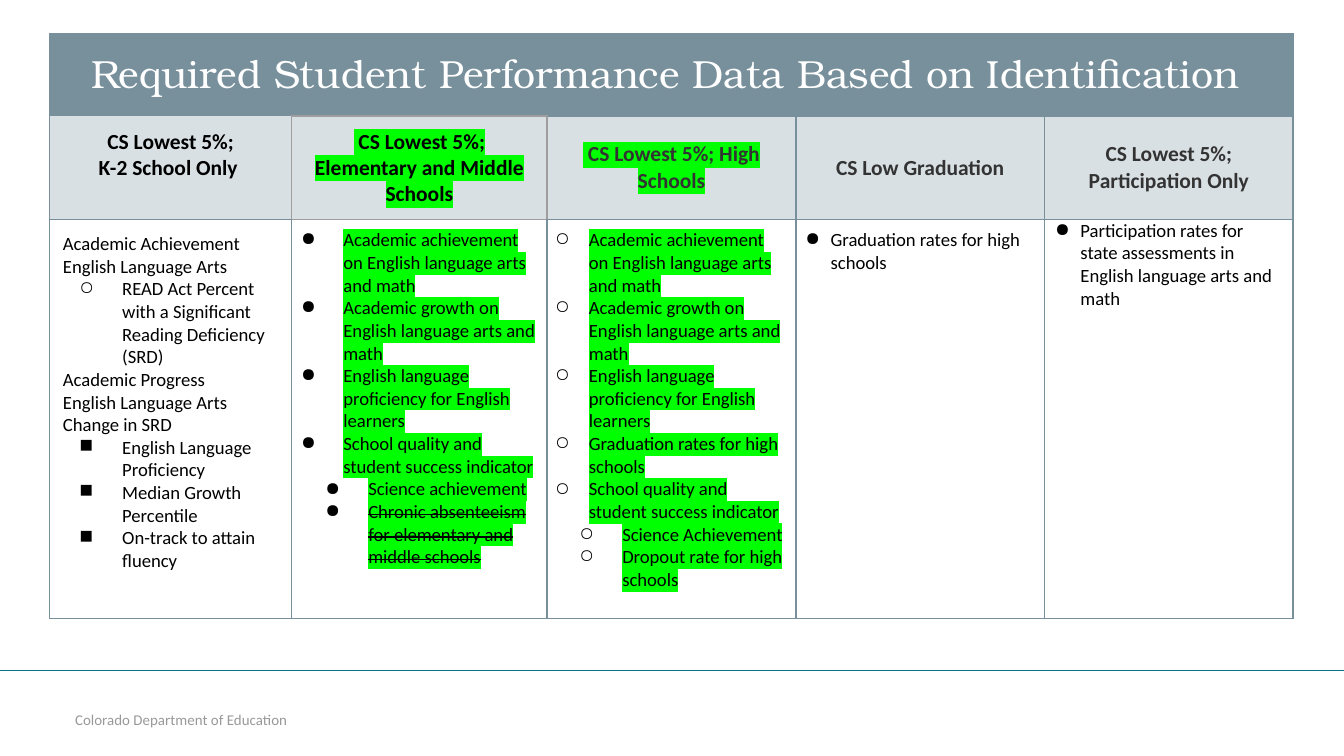
"""Build the slide on required student performance data by school identification."""
from dataclasses import dataclass, field

from lxml import etree
from pptx import Presentation, util as u
from pptx.dml.color import RGBColor
from pptx.enum import shapes, text
from pptx.oxml.ns import qn


@dataclass(frozen=True)
class Theme:
    slate: str = "78909C"
    grey: str = "9E9E9E"
    teal: str = "077682"
    green: str = "00FF00"
    white: str = "FFFFFF"
    black: str = "000000"
    charcoal: str = "333333"
    footer_grey: str = "999999"
    serif: str = "TeX Gyre Bonum"
    sans: str = "Calibri"
    title_size: float = 21
    head_size: float = 11.5
    body_size: float = 10
    footer_size: float = 8
    head_alpha: int = 28000


THEME = Theme()


@dataclass(frozen=True)
class Style:
    size: float
    color: str
    font: str = THEME.sans
    bold: bool = False
    highlight: bool = False
    centred: bool = False


@dataclass(frozen=True)
class Item:
    words: str
    bullet: str = ""
    left: float = 0
    hang: float = 0
    level: int = 0
    struck: bool = False


@dataclass(frozen=True)
class Column:
    width: float
    heads: list[str]
    items: list[Item]
    head_color: str = THEME.charcoal
    highlight: bool = False
    head_insets: tuple = (0.18,) * 4
    body_insets: tuple = (0.18,) * 4
    anchor: text.MSO_ANCHOR = text.MSO_ANCHOR.MIDDLE
    line: float = 1
    head_grey: str = ""
    body_grey: str = ""


@dataclass(frozen=True)
class CellLook:
    fill: str
    insets: tuple = (0.25,) * 4
    anchor: text.MSO_ANCHOR = text.MSO_ANCHOR.TOP
    line: float = 0.75
    grey_sides: str = ""
    alpha: int = field(default=0)


def bullets(mark: str, left: float, hang: float, level: int, *lines: str) -> list[Item]:
    """Return bulleted items that share one indent."""
    return [Item(words, mark, left, hang, level) for words in lines]


SHARED = (
    "Academic achievement on English language arts and math",
    "Academic growth on English language arts and math",
    "English language proficiency for English learners",
)
QUALITY = "School quality and student success indicator"
TITLE = "Required Student Performance Data Based on Identification "
ROWS = (1.55, 1.96, 7.54)
WIDE = (0.25,) * 4
FLAT = (0.2, 0, 0.2, 0)
TOP = text.MSO_ANCHOR.TOP

COLUMNS = [
    Column(4.57, [" CS Lowest 5%; ", "K-2 School Only "], [
        Item("Academic Achievement"),
        Item("English Language Arts"),
        *bullets("○", 1.12, 0.81, 1,
                 "READ Act Percent with a Significant Reading Deficiency (SRD)"),
        Item("Academic Progress"),
        Item("English Language Arts"),
        Item("Change in SRD"),
        *bullets("■", 1.12, 0.81, 2, "English Language Proficiency",
                 "Median Growth Percentile", "On-track to attain fluency"),
    ], THEME.black, False, WIDE, WIDE, TOP, 0.75, "R"),
    Column(4.83, [" CS Lowest 5%; Elementary and Middle Schools"], [
        *bullets("●", 0.8, 0.8, 0, *SHARED, QUALITY),
        *bullets("●", 1.27, 0.81, 0, "Science achievement"),
        Item("Chronic absenteeism for elementary and middle schools",
             "●", 1.27, 0.81, struck=True),
    ], THEME.black, True, WIDE, anchor=TOP, head_grey="LRTB", body_grey="T"),
    Column(4.7, [" CS Lowest 5%; High Schools"], [
        *bullets("○", 0.64, 0.64, 1, *SHARED, "Graduation rates for high schools", QUALITY),
        *bullets("○", 1.27, 0.81, 1, "Science Achievement", "Dropout rate for high schools"),
    ], highlight=True, body_insets=(0.15, 0.18, 0.18, 0.18), head_grey="L"),
    Column(4.7, ["CS Low Graduation"],
           bullets("●", 0.48, 0.48, 0, "Graduation rates for high schools")),
    Column(4.7, ["CS Lowest 5%; Participation Only"],
           bullets("●", 0.48, 0.48, 0,
                   "Participation rates for state assessments in English language arts and math"),
           head_insets=FLAT, body_insets=FLAT),
]


def apply(target: object, values: dict) -> None:
    """Set each named attribute on the target."""
    for name, value in values.items():
        setattr(target, name, value)


def add_color(parent: etree._Element, tag: str, color: str) -> etree._Element:
    """Append an element that holds one RGB colour."""
    holder = etree.SubElement(parent, qn(tag))
    etree.SubElement(holder, qn("a:srgbClr"), val=color)
    return holder


def write(frame: object, items: list[Item], style: Style) -> None:
    """Write the items as the paragraphs of a text frame."""
    for index, item in enumerate(items):
        para = frame.paragraphs[0] if index == 0 else frame.add_paragraph()
        apply(para, {"level": item.level, "alignment":
                     text.PP_ALIGN.CENTER if style.centred else text.PP_ALIGN.LEFT})
        if item.bullet:
            props = para._p.get_or_add_pPr()
            props.set("marL", str(u.Cm(item.left)))
            props.set("indent", str(-u.Cm(item.hang)))
            add_color(props, "a:buClr", THEME.black)
            etree.SubElement(props, qn("a:buChar"), char=item.bullet)
        span = para.add_run()
        span.text = item.words
        apply(span.font, {"size": u.Pt(style.size), "name": style.font, "bold": style.bold})
        span.font.color.rgb = RGBColor.from_string(style.color)
        props = span._r.get_or_add_rPr()
        if style.highlight:
            props.find(qn("a:solidFill")).addnext(add_color(props, "a:highlight", THEME.green))
        if item.struck:
            props.set("strike", "sngStrike")


def fill_cell(cell: object, items: list[Item], style: Style, look: CellLook) -> None:
    """Format one table cell and write its text."""
    left, top, right, bottom = map(u.Cm, look.insets)
    apply(cell, {"margin_left": left, "margin_top": top, "margin_right": right,
                 "margin_bottom": bottom, "vertical_anchor": look.anchor})
    props = cell._tc.get_or_add_tcPr()
    for side in "LRTB":
        edge = etree.SubElement(props, qn(f"a:ln{side}"), w=str(u.Pt(look.line)))
        add_color(edge, "a:solidFill", THEME.grey if side in look.grey_sides else THEME.slate)
    cell.fill.solid()
    cell.fill.fore_color.rgb = RGBColor.from_string(look.fill)
    if look.alpha:
        color = props.find(f"{qn('a:solidFill')}/{qn('a:srgbClr')}")
        etree.SubElement(color, qn("a:alpha"), val=str(look.alpha))
    write(cell.text_frame, items, style)


def add_footer(page: object, width: int) -> None:
    """Draw the footer rule and the department name."""
    rule = page.shapes.add_connector(
        shapes.MSO_CONNECTOR.STRAIGHT, 0, u.Cm(12.67), width, u.Cm(12.67))
    rule.line.color.rgb = RGBColor.from_string(THEME.teal)
    rule.line.width = u.Pt(0.75)
    etree.SubElement(rule._element.spPr, qn("a:effectLst"))
    box = page.shapes.add_textbox(u.Cm(1.42), u.Cm(13.44), u.Cm(8.2), u.Cm(0.33))
    apply(box.text_frame, {"margin_left": 0, "margin_top": 0, "margin_right": 0,
                           "margin_bottom": 0, "word_wrap": True,
                           "auto_size": text.MSO_AUTO_SIZE.SHAPE_TO_FIT_TEXT})
    write(box.text_frame, [Item("Colorado Department of Education")],
          Style(THEME.footer_size, THEME.footer_grey))


def add_requirements(page: object) -> None:
    """Draw the table of required data with its title row."""
    table = page.shapes.add_table(
        len(ROWS), len(COLUMNS), u.Cm(0.94), u.Cm(0.64),
        u.Cm(sum(column.width for column in COLUMNS)), u.Cm(sum(ROWS))).table
    apply(table, {"first_row": False, "horz_banding": False})
    for row, height in zip(table.rows, ROWS):
        row.height = u.Cm(height)
    table.cell(0, 0).merge(table.cell(0, len(COLUMNS) - 1))
    fill_cell(table.cell(0, 0), [Item(TITLE)],
              Style(THEME.title_size, THEME.white, THEME.serif, centred=True),
              CellLook(THEME.slate))
    for index, column in enumerate(COLUMNS):
        table.columns[index].width = u.Cm(column.width)
        fill_cell(table.cell(1, index), [Item(head) for head in column.heads],
                  Style(THEME.head_size, column.head_color, bold=True,
                        highlight=column.highlight, centred=True),
                  CellLook(THEME.slate, column.head_insets, column.anchor,
                           column.line, column.head_grey, THEME.head_alpha))
        fill_cell(table.cell(2, index), column.items,
                  Style(THEME.body_size, THEME.black, highlight=column.highlight),
                  CellLook(THEME.white, column.body_insets, line=column.line,
                           grey_sides=column.body_grey))


def main() -> None:
    """Build and save the deck."""
    deck = Presentation()
    apply(deck, {"slide_width": u.Cm(25.4), "slide_height": u.Cm(14.29)})
    page = deck.slides.add_slide(deck.slide_layouts[6])
    add_footer(page, deck.slide_width)
    add_requirements(page)
    deck.save("out.pptx")


if __name__ == "__main__":
    main()
